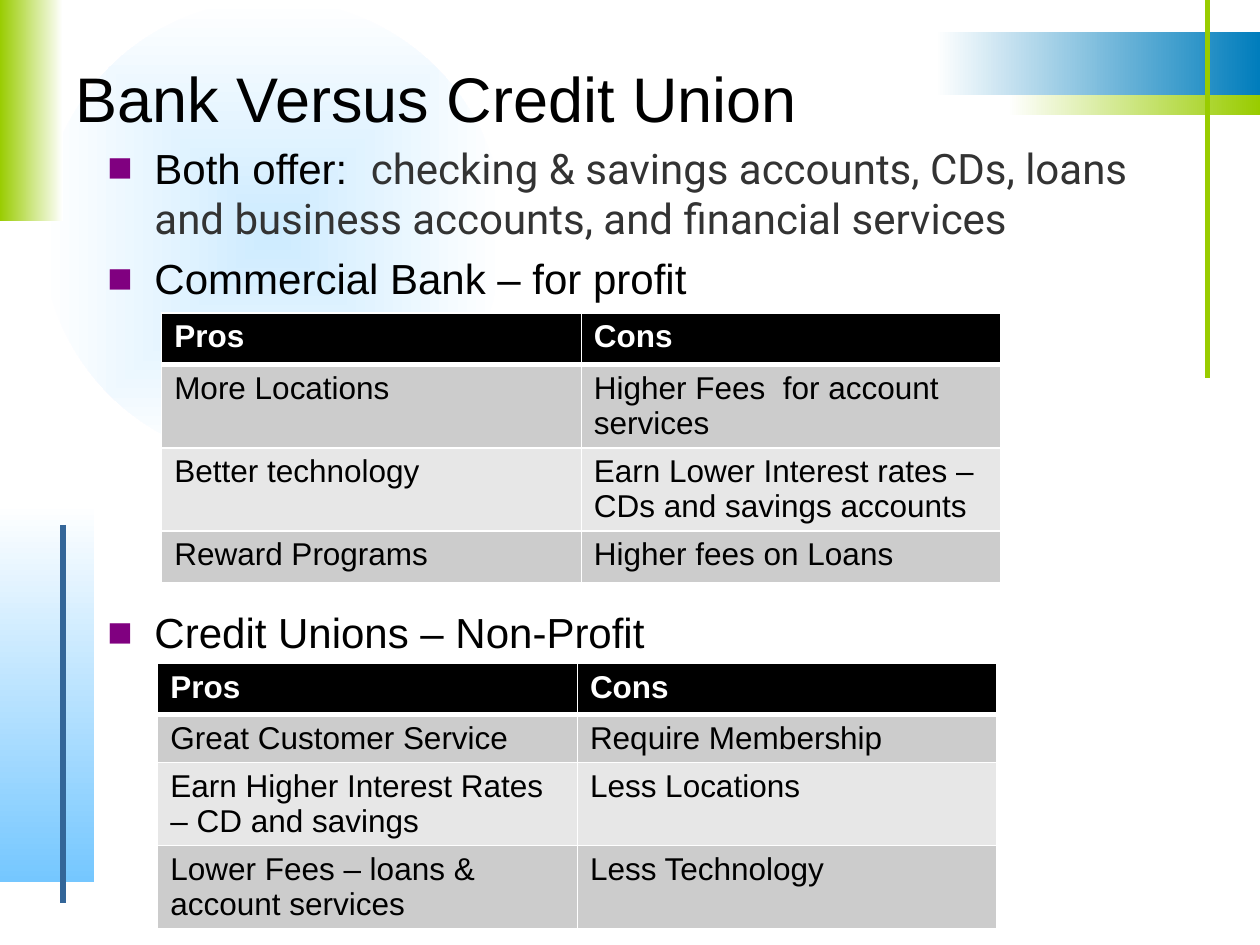
from lxml.etree import SubElement
from pptx import Presentation
from pptx.dml.color import RGBColor
from pptx.enum.shapes import MSO_CONNECTOR, MSO_SHAPE
from pptx.enum.text import MSO_ANCHOR, MSO_AUTO_SIZE, PP_ALIGN
from pptx.oxml.ns import qn
from pptx.util import Cm, Pt

COLORS = {
    "white": "FFFFFF", "black": "000000", "green": "99CC00", "blue": "007DBC",
    "sky": "75C7FF", "pale": "CDEBFF", "steel": "336699", "purple": "800080",
    "text": "333333", "band": "CCCCCC", "light band": "E7E7E7",
}


def color(name):
    return RGBColor.from_string(COLORS[name])


def add_border(cell_properties, side, points):
    """Draw a white border; side is L, R, T or B."""
    line = SubElement(cell_properties, qn(f"a:ln{side}"), w=str(Pt(points)))
    fill = SubElement(line, qn("a:solidFill"))
    SubElement(fill, qn("a:srgbClr"), val=COLORS["white"])


deck = Presentation()
deck.slide_width, deck.slide_height = Cm(25.4), Cm(19.05)
page = deck.slides.add_slide(deck.slide_layouts[1])
title, body = page.placeholders

# Background decoration: shape, left, top, width, height, colours, angle
# (counter-clockwise; None means from the centre outwards)
decorations = [
    (MSO_SHAPE.OVAL, 0.84, 0, 9.32, 9.32, "pale", "white", None),
    (MSO_SHAPE.RECTANGLE, 18.85, 0.64, 6.55, 1.27, "white", "blue", 0),
    (MSO_SHAPE.RECTANGLE, 0, 10.16, 1.9, 7.62, "white", "sky", 270),
    (MSO_SHAPE.RECTANGLE, 0, 0, 1.27, 4.45, "green", "white", 0),
    (MSO_SHAPE.RECTANGLE, 20.32, 1.91, 5.08, 0.42, "white", "green", 0),
]
for kind, left, top, width, height, start, end, angle in decorations:
    shape = page.shapes.add_shape(kind, Cm(left), Cm(top), Cm(width), Cm(height))
    shape.shadow.inherit = False
    shape.line.fill.background()
    shape.fill.gradient()
    for stop, name in zip(shape.fill.gradient_stops, (start, end)):
        stop.color.rgb = color(name)
    if angle is not None:
        shape.fill.gradient_angle = angle
    else:
        gradient = shape.element.spPr.find(qn("a:gradFill"))
        gradient.remove(gradient.find(qn("a:lin")))
        center = SubElement(gradient, qn("a:path"), path="shape")
        SubElement(center, qn("a:fillToRect"), l="50000", t="50000", r="50000", b="50000")

for x, top, bottom, name in [(24.34, 0, 7.62, "green"), (1.27, 10.58, 18.2, "steel")]:
    rule = page.shapes.add_connector(MSO_CONNECTOR.STRAIGHT, Cm(x), Cm(top), Cm(x), Cm(bottom))
    rule.line.color.rgb = color(name)
    rule.line.width = Pt(3)
    SubElement(rule.element.spPr, qn("a:effectLst"))

# Title and list go in front of the decoration
for box in (title, body):
    box.element.getparent().append(box.element)
    box.text_frame.word_wrap = True
    box.text_frame.auto_size = MSO_AUTO_SIZE.NONE

title.left, title.top, title.width, title.height = Cm(1.27), Cm(0.43), Cm(22.86), Cm(3.05)
title.text_frame.vertical_anchor = MSO_ANCHOR.MIDDLE
para = title.text_frame.paragraphs[0]
para.text = "Bank Versus Credit Union"
para.alignment = PP_ALIGN.LEFT
para.font.name, para.font.size = "Arial", Pt(36)
para.font.color.rgb = color("black")

body.left, body.top, body.width, body.height = Cm(1.91), Cm(2.74), Cm(22.23), Cm(14.05)
body.text_frame.vertical_anchor = MSO_ANCHOR.TOP
# The last item leaves room for the first table
items = [
    (5.5, [("Both offer:  ", "Arial", "black"),
           ("checking & savings accounts, CDs, loans and business accounts, "
            "and financial services", "Roboto", "text")]),
    (5.5, [("Commercial Bank – for profit", "Arial", "black")]),
    (173.5, [("Credit Unions – Non-Profit", "Arial", "black")]),
]
for index, (space, spans) in enumerate(items):
    para = body.text_frame.paragraphs[0] if index == 0 else body.text_frame.add_paragraph()
    para.space_before = Pt(space)
    para.font.size = Pt(24)
    for text, font, name in spans:
        span = para.add_run()
        span.text = text
        span.font.name, span.font.size = font, Pt(24)
        span.font.color.rgb = color(name)
    properties = para._p.get_or_add_pPr()
    properties.set("marL", str(Cm(0.95)))
    properties.set("indent", str(Cm(-0.95)))
    bullet_color = SubElement(properties, qn("a:buClr"))
    SubElement(bullet_color, qn("a:srgbClr"), val=COLORS["purple"])
    SubElement(properties, qn("a:buFont"), typeface="Arial")
    SubElement(properties, qn("a:buChar"), char="■")
    # Bullet elements come before the default run properties
    defaults = properties.find(qn("a:defRPr"))
    properties.append(defaults)

# Tables: left, top, row heights, rows
tables = [
    (3.26, 6.31, [1.04, 1.67, 1.67, 1.04], [
        ("Pros", "Cons"),
        ("More Locations", "Higher Fees  for account services"),
        ("Better technology", "Earn Lower Interest rates – CDs and savings accounts"),
        ("Reward Programs", "Higher fees on Loans"),
    ]),
    (3.18, 13.38, [1.02, 0.97, 1.67, 1.67], [
        ("Pros", "Cons"),
        ("Great Customer Service", "Require Membership"),
        ("Earn Higher Interest Rates – CD and savings", "Less Locations"),
        ("Lower Fees – loans & account services", "Less Technology"),
    ]),
]
for left, top, heights, rows in tables:
    frame = page.shapes.add_table(len(rows), 2, Cm(left), Cm(top), Cm(16.93), Cm(sum(heights)))
    table = frame.table
    table.horz_banding = False
    for column in table.columns:
        column.width = Cm(8.46)
    for row_index, texts in enumerate(rows):
        table.rows[row_index].height = Cm(heights[row_index])
        header = row_index == 0
        for column_index, text in enumerate(texts):
            cell = table.cell(row_index, column_index)
            cell_properties = cell._tc.get_or_add_tcPr()
            add_border(cell_properties, "L", 1)
            add_border(cell_properties, "R", 1)
            add_border(cell_properties, "T", 3 if row_index == 1 else 1)
            add_border(cell_properties, "B", 3 if header else 1)
            cell.fill.solid()
            cell.fill.fore_color.rgb = color(
                "black" if header else "band" if row_index % 2 else "light band")
            para = cell.text_frame.paragraphs[0]
            para.text = text
            para.font.name, para.font.size = "Arial", Pt(18)
            para.font.bold = header
            para.font.color.rgb = color("white" if header else "black")

deck.save("out.pptx")
